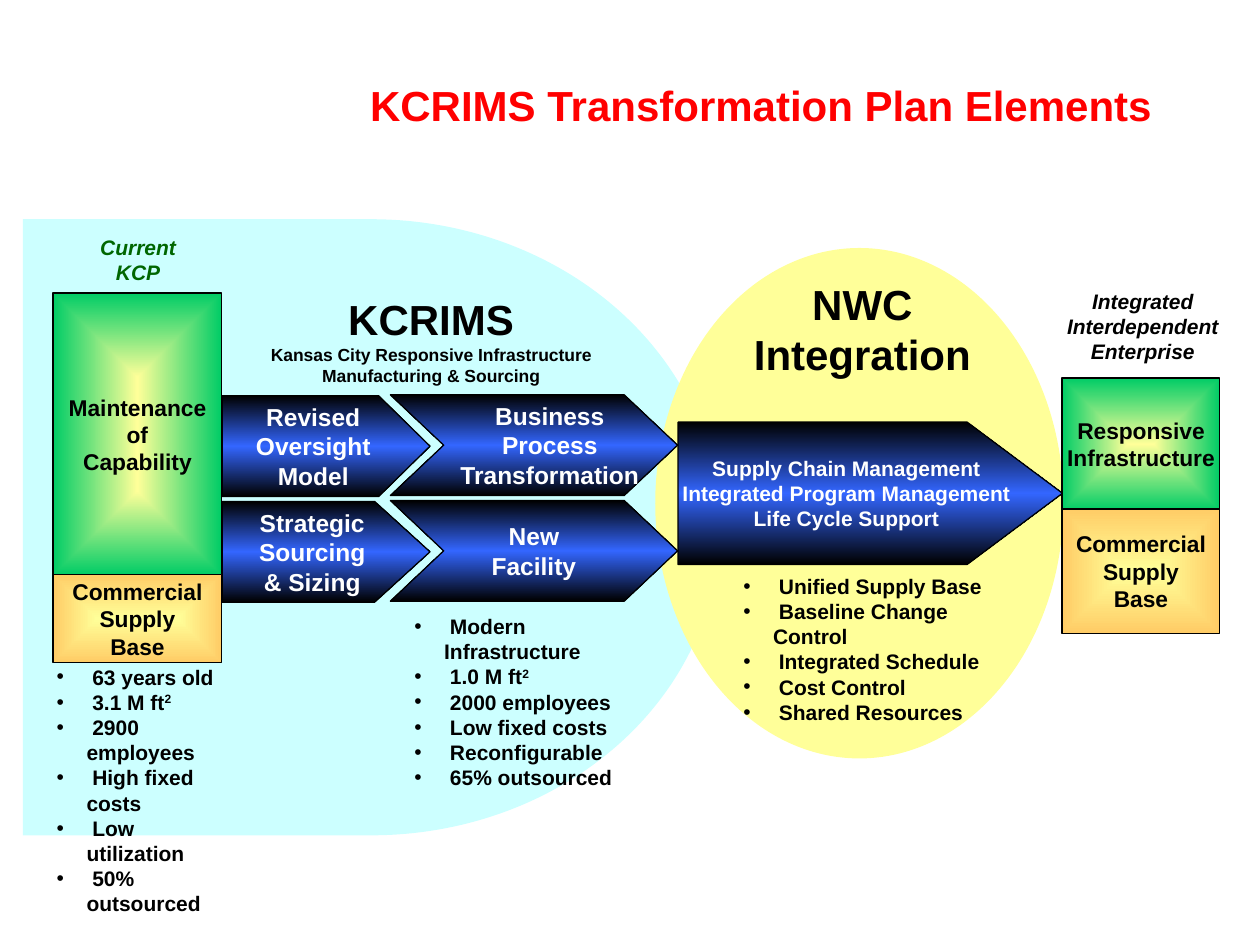
from lxml.etree import SubElement
from pptx import Presentation
from pptx.dml.color import RGBColor
from pptx.enum.shapes import MSO_SHAPE as Preset
from pptx.enum.text import MSO_ANCHOR as Anchor, MSO_AUTO_SIZE as AutoSize, PP_ALIGN as Align
from pptx.oxml import parse_xml
from pptx.oxml.ns import nsdecls, qn
from pptx.util import Cm, Pt

COLORS = {
    "red": "FF0000", "dark_green": "006600", "black": "000000", "white": "FFFFFF",
    "cyan": "CCFFFF", "yellow": "FFFF99", "green": "00CC66", "orange": "FFCC66",
    "blue": "3366FF",
}
BULLET_INDENT = Cm(0.6)
ROW_TOPS = (7.96, 10.09)
ROW_HEIGHT = 2.03

CURRENT_FACTS = ["63 years old", "3.1 M ft^2", "2900 employees", "High fixed costs",
                 "Low utilization", "50% outsourced"]
FACILITY_FACTS = ["Modern Infrastructure", "1.0 M ft^2", "2000 employees",
                  "Low fixed costs", "Reconfigurable", "65% outsourced"]
INTEGRATION_FACTS = ["Unified Supply Base", "Baseline Change Control",
                     "Integrated Schedule", "Cost Control", "Shared Resources"]


def rgb(color):
    return RGBColor.from_string(COLORS[color])


def style(paragraph, size, color="black", italic=False, align=Align.CENTER):
    paragraph.alignment = align
    font = paragraph.font
    font.name, font.size, font.bold, font.italic = "Arial", Pt(size), True, italic
    font.color.rgb = rgb(color)


def write_lines(frame, lines, size, color="black", italic=False):
    frame.text = "\n".join(lines)
    for paragraph in frame.paragraphs:
        style(paragraph, size, color, italic)


def place(shape, box):
    shape.left, shape.top, shape.width, shape.height = (Cm(length) for length in box)


def add_label(slide, box, lines, size, color="black", italic=False):
    frame = slide.shapes.add_textbox(*(Cm(length) for length in box)).text_frame
    frame.word_wrap = True
    write_lines(frame, lines, size, color, italic)
    return frame


def add_backdrop(slide, preset, box, color):
    backdrop = slide.shapes.add_shape(preset, *(Cm(length) for length in box))
    backdrop.shadow.inherit = False
    backdrop.fill.solid()
    backdrop.fill.fore_color.rgb = rgb(color)
    backdrop.line.fill.background()
    return backdrop


def set_gradient(shape, stops, direction):
    """Replace the solid fill; stops are (percent, color) pairs."""
    stop_xml = "".join(
        f'<a:gs pos="{percent * 1000}"><a:srgbClr val="{COLORS[color]}"/></a:gs>'
        for percent, color in stops)
    gradient = parse_xml(f'<a:gradFill {nsdecls("a")} rotWithShape="1">'
                         f"<a:gsLst>{stop_xml}</a:gsLst>{direction}</a:gradFill>")
    properties = shape.element.spPr
    properties.replace(properties.find(qn("a:solidFill")), gradient)


def add_block(slide, preset, box, lines, size, text_color):
    block = add_backdrop(slide, preset, box, "black")
    block.line.color.rgb = rgb("black")
    block.line.width = Pt(0.75)
    frame = block.text_frame
    frame.word_wrap = False
    frame.vertical_anchor = Anchor.MIDDLE
    write_lines(frame, lines, size, text_color)
    return block


def add_arrow(slide, preset, box, point, lines, size=14):
    arrow = add_block(slide, preset, box, lines, size, "white")
    arrow.adjustments[0] = point
    set_gradient(arrow, [(0, "black"), (50, "blue"), (100, "black")],
                 '<a:lin ang="5400000" scaled="1"/>')
    return arrow


def add_glowing_box(slide, box, edge_color, lines):
    glowing_box = add_block(slide, Preset.RECTANGLE, box, lines, 13, "black")
    set_gradient(glowing_box, [(0, "yellow"), (100, edge_color)],
                 '<a:path path="shape"><a:fillToRect l="50000" t="50000" '
                 'r="50000" b="50000"/></a:path>')


def fill_list(placeholder, box, facts):
    """Fill a body placeholder and bring it to the front; ^ starts a superscript."""
    place(placeholder, box)
    placeholder.element.getparent().append(placeholder.element)
    frame = placeholder.text_frame
    frame.word_wrap = True
    frame.auto_size = AutoSize.NONE
    frame.vertical_anchor = Anchor.TOP
    for number, fact in enumerate(facts):
        paragraph = frame.add_paragraph() if number else frame.paragraphs[0]
        properties = paragraph._p.get_or_add_pPr()
        properties.set("marL", str(BULLET_INDENT))
        properties.set("indent", str(-BULLET_INDENT))
        SubElement(properties, qn("a:buChar")).set("char", "•")
        paragraph.space_before = Pt(0)
        style(paragraph, 12, align=Align.LEFT)
        base, _, exponent = fact.partition("^")
        paragraph.add_run().text = f" {base}"
        if exponent:
            raised = paragraph.add_run()
            raised.text = exponent
            raised._r.get_or_add_rPr().set("baseline", "30000")


def add_title(slide):
    title = slide.shapes.title
    place(title, (6.35, 1.47, 17.98, 1.27))
    title.text_frame.auto_size = AutoSize.NONE
    title.text_frame.vertical_anchor = Anchor.MIDDLE
    write_lines(title.text_frame, ["KCRIMS Transformation Plan Elements"], 24, "red")


def add_process_arrows(slide):
    rows = [
        (["Revised", "Oversight", "Model"], 0.51,
         ["Business", "Process", "Transformation"], 0.89),
        (["Strategic", "Sourcing", "& Sizing"], 0.55, ["New", "Facility"], 0.25),
    ]
    for top, (first, point, second, left_margin) in zip(ROW_TOPS, rows):
        add_arrow(slide, Preset.PENTAGON, (4.48, top + 0.02, 4.19, ROW_HEIGHT), point, first)
        chevron = add_arrow(slide, Preset.CHEVRON, (7.87, top, 5.79, ROW_HEIGHT), 0.53, second)
        chevron.text_frame.margin_left = Cm(left_margin)
    add_arrow(slide, Preset.PENTAGON, (13.67, 8.51, 7.75, 2.87), 0.67,
              ["Supply Chain Management", "Integrated Program Management",
               "Life Cycle Support"], 12)


def add_states(slide):
    supply_base = ["Commercial", "Supply", "Base"]
    add_glowing_box(slide, (1.07, 5.91, 3.4, 5.69), "green",
                    ["Maintenance", "of", "Capability"])
    add_glowing_box(slide, (1.07, 11.58, 3.4, 1.78), "orange", supply_base)
    add_glowing_box(slide, (21.41, 7.62, 3.18, 2.67), "green",
                    ["Responsive", "Infrastructure"])
    add_glowing_box(slide, (21.41, 10.26, 3.18, 2.51), "orange", supply_base)


def add_headings(slide):
    add_label(slide, (1.3, 4.6, 2.97, 1.27), ["Current", "KCP"], 12, "dark_green", True)
    add_label(slide, (20.68, 5.69, 4.72, 1.78),
              ["Integrated", "Interdependent", "Enterprise"], 12, italic=True)
    add_label(slide, (14.25, 5.49, 6.27, 2.29), ["NWC", "Integration"], 24)
    kcrims = add_label(slide, (4.88, 5.79, 7.62, 2.11), [
        "KCRIMS", "Kansas City Responsive Infrastructure Manufacturing & Sourcing"], 24)
    kcrims.paragraphs[1].font.size = Pt(10)


def add_lists(slide):
    current, facility, integration, spare = list(slide.placeholders)[1:5]
    fill_list(current, (0.89, 13.26, 4.06, 3.3), CURRENT_FACTS)
    fill_list(facility, (8.1, 12.24, 5.31, 3.3), FACILITY_FACTS)
    fill_list(integration, (14.73, 11.43, 5.82, 2.79), INTEGRATION_FACTS)
    spare.element.getparent().remove(spare.element)


def main():
    deck = Presentation()
    deck.slide_width, deck.slide_height = Cm(25.4), Cm(19.05)
    slide = deck.slides.add_slide(deck.slide_layouts.get_by_name("Comparison"))
    add_title(slide)
    add_backdrop(slide, Preset.FLOWCHART_DELAY, (0.46, 4.42, 14.05, 12.42), "cyan")
    add_backdrop(slide, Preset.OVAL, (13.21, 5, 8.23, 10.29), "yellow")
    add_process_arrows(slide)
    add_states(slide)
    add_headings(slide)
    add_lists(slide)
    deck.save("out.pptx")


if __name__ == "__main__":
    main()
